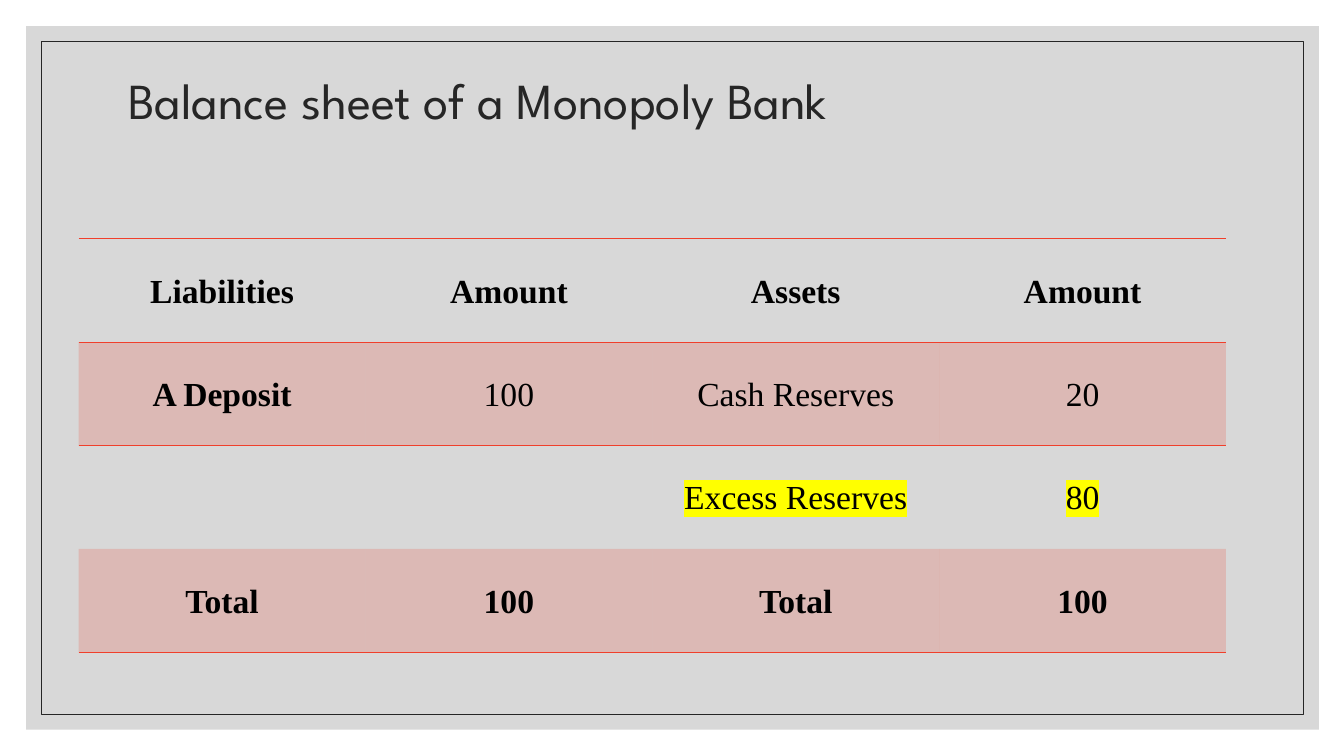
from lxml.etree import SubElement
from pptx import Presentation
from pptx.dml.color import RGBColor
from pptx.enum.shapes import MSO_SHAPE as Preset
from pptx.enum.text import MSO_ANCHOR as Anchor, PP_ALIGN as Align
from pptx.oxml.ns import qn
from pptx.util import Inches, Pt

TITLE = "Balance sheet of a Monopoly Bank"
BALANCE = [
    ["Liabilities", "Amount", "Assets", "Amount"],
    ["A Deposit", "100", "Cash Reserves", "20"],
    ["", "", "Excess Reserves", "80"],
    ["Total", "100", "Total", "100"],
]
HEADER, EXCESS, TOTAL = 0, 2, 3
BOLD_CELLS = {(row, col) for row in (HEADER, TOTAL) for col in range(4)} | {(1, 0)}
PLAIN_TABLE_STYLE = "{2D5ABB26-0587-4C30-8999-92F81FD0307C}"


def color(code):
    return RGBColor.from_string(code)


def apply(target, values):
    for name, value in values.items():
        setattr(target, name, value)


def set_opacity(properties, percent):
    tint = properties.find(qn("a:solidFill"))[0]
    SubElement(tint, qn("a:alpha"), val=str(percent * 1000))


class BalanceSlide:
    ink, accent, panel, marker = "262626", "F03F2B", "BFBFBF", "FFFF00"
    title_font = {"name": "League Spartan", "size": Pt(36), "bold": False}
    cell_font = {"name": "Times New Roman", "size": Pt(24)}
    cell_format = {
        "vertical_anchor": Anchor.MIDDLE,
        "margin_left": Inches(0.07), "margin_right": Inches(0.07),
        "margin_top": 0, "margin_bottom": 0,
    }
    cell_paragraph = {"alignment": Align.CENTER, "line_spacing": 1.07, "space_after": Pt(8)}

    def __init__(self, deck):
        self.slide = deck.slides.add_slide(deck.slide_layouts[5])

    def rectangle(self, left, top, width, height, fill=None, opacity=100, line=None):
        box = self.slide.shapes.add_shape(
            Preset.RECTANGLE, *map(Inches, (left, top, width, height)))
        box.shadow.inherit = False
        if fill:
            box.fill.solid()
            box.fill.fore_color.rgb = color(fill)
            set_opacity(box.element.spPr, opacity)
        else:
            box.fill.background()
        if line:
            box.line.color.rgb = color(line)
            box.line.width = Pt(0.5)
        else:
            box.line.fill.background()

    def title(self, text, left, top, width, height):
        heading = self.slide.shapes.title
        apply(heading, dict(zip(("left", "top", "width", "height"),
                                map(Inches, (left, top, width, height)))))
        self.slide.shapes.element.append(heading.element)
        frame = heading.text_frame
        frame.text = text
        apply(frame, {"vertical_anchor": Anchor.MIDDLE, "word_wrap": True})
        paragraph = frame.paragraphs[0]
        apply(paragraph, {"alignment": Align.LEFT, "line_spacing": 0.9})
        font = paragraph.runs[0].font
        apply(font, self.title_font)
        font.color.rgb = color(self.ink)

    def table(self, rows, left, top, width, height):
        holder = self.slide.shapes.add_table(
            len(rows), len(rows[0]), *map(Inches, (left, top, width, height)))
        next(holder.element.iter(qn("a:tableStyleId"))).text = PLAIN_TABLE_STYLE
        apply(holder.table, {"first_row": False, "horz_banding": False})
        for row, entries in enumerate(rows):
            for col, entry in enumerate(entries):
                cell = holder.table.cell(row, col)
                apply(cell, self.cell_format)
                self.cell_surface(cell, row)
                if entry:
                    self.cell_text(cell, entry, (row, col) in BOLD_CELLS, row == EXCESS)

    def cell_surface(self, cell, row):
        properties = cell._tc.get_or_add_tcPr()
        sides = {HEADER: ("a:lnT", "a:lnB"), 1: ("a:lnT",), TOTAL: ("a:lnB",)}
        for side in sides.get(row, ()):
            rule = SubElement(properties, qn(side), w=str(Pt(1)))
            stroke = SubElement(rule, qn("a:solidFill"))
            SubElement(stroke, qn("a:srgbClr"), val=self.accent)
        if row % 2:
            cell.fill.solid()
            cell.fill.fore_color.rgb = color(self.accent)
            set_opacity(properties, 20)
        else:
            cell.fill.background()

    def cell_text(self, cell, text, bold, highlighted):
        paragraph = cell.text_frame.paragraphs[0]
        apply(paragraph, self.cell_paragraph)
        run = paragraph.add_run()
        run.text = text
        run.font.color.rgb = color("000000")
        if highlighted:
            highlight = SubElement(run.font._element, qn("a:highlight"))
            SubElement(highlight, qn("a:srgbClr"), val=self.marker)
        apply(run.font, {**self.cell_font, "bold": bold})


def main():
    deck = Presentation()
    apply(deck, {"slide_width": Inches(13.33), "slide_height": Inches(7.5)})
    sheet = BalanceSlide(deck)
    sheet.rectangle(0.26, 0.26, 12.82, 6.98, fill=sheet.panel, opacity=60)
    sheet.rectangle(0.41, 0.41, 12.52, 6.68, line=sheet.ink)
    sheet.title(TITLE, 1.17, 0.7, 11, 0.64)
    sheet.table(BALANCE, 0.78, 2.37, 11.38, 4.1)
    deck.save("out.pptx")


if __name__ == "__main__":
    main()
